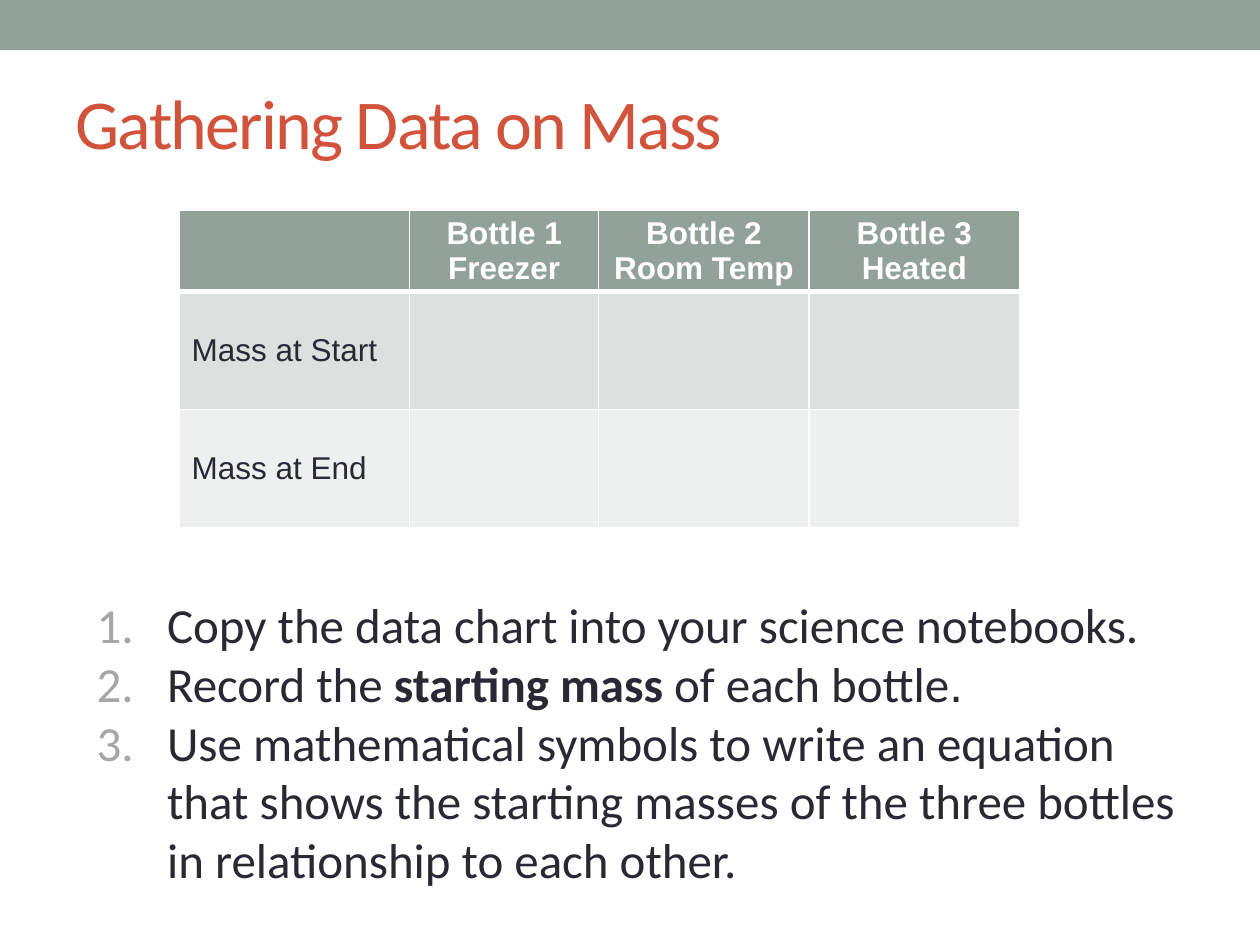
import dataclasses

import lxml.etree
import pptx
import pptx.dml.color
import pptx.enum.shapes
import pptx.enum.text
import pptx.oxml.ns
import pptx.slide
import pptx.table
import pptx.text.text
import pptx.util

Cm = pptx.util.Cm
Pt = pptx.util.Pt
qn = pptx.oxml.ns.qn
Align = pptx.enum.text.PP_ALIGN
Anchor = pptx.enum.text.MSO_ANCHOR


@dataclasses.dataclass(frozen=True)
class Theme:
    sage: str = "93A299"
    rust: str = "D2533C"
    ink: str = "292934"
    white: str = "FFFFFF"
    number: str = "A6A6A6"
    start_row: str = "DCE0DE"
    end_row: str = "EEF0EF"
    heading_font: str = "Calibri"
    table_font: str = "Arial"
    title_size: int = 40
    table_size: int = 18
    step_size: int = 28


@dataclasses.dataclass(frozen=True)
class Phrase:
    text: str
    bold: bool = False
    font: str = "Calibri"


@dataclasses.dataclass(frozen=True)
class MassRow:
    labels: tuple[str, ...]
    height: float
    fill: str
    color: str
    rule_above: int = 1
    rule_below: int = 1
    bold: bool = False
    align: Align = Align.LEFT


THEME = Theme()
COLUMN_WIDTHS = (4.65, 3.81, 4.24, 4.24)
MASS_ROWS = (
    MassRow(("", "Bottle 1\nFreezer", "Bottle 2\nRoom Temp", "Bottle 3\nHeated"),
            1.63, THEME.sage, THEME.white, rule_below=3, bold=True, align=Align.CENTER),
    MassRow(("Mass at Start", "", "", ""), 2.38, THEME.start_row, THEME.ink, rule_above=3),
    MassRow(("Mass at End", "", "", ""), 2.38, THEME.end_row, THEME.ink),
)
STEPS = (
    (Phrase("Copy the data chart into your science notebooks."),),
    (Phrase("Record the "), Phrase("starting mass ", bold=True),
     Phrase("of each bottle"), Phrase(".", font="Arial")),
    (Phrase("Use mathematical symbols to write an equation that shows the starting "
            "masses of the three bottles in relationship to each other."),),
)


def rgb(color: str) -> pptx.dml.color.RGBColor:
    return pptx.dml.color.RGBColor.from_string(color)


def write_text(paragraph: pptx.text.text._Paragraph, text: str, *, font: str, size: int,
               color: str, bold: bool = False, spacing: int = 0) -> None:
    run = paragraph.add_run()
    run.text = text
    run.font.name = font
    run.font.size = Pt(size)
    run.font.bold = bold
    run.font.color.rgb = rgb(color)
    if spacing:
        run.font._element.set("spc", str(spacing * 100))


def next_paragraph(frame: pptx.text.text.TextFrame, index: int) -> pptx.text.text._Paragraph:
    return frame.add_paragraph() if index else frame.paragraphs[0]


def rule_cell(cell: pptx.table._Cell, above: int, below: int) -> None:
    properties = cell._tc.get_or_add_tcPr()
    for side, width in (("L", 1), ("R", 1), ("T", above), ("B", below)):
        line = lxml.etree.SubElement(properties, qn(f"a:ln{side}"), w=str(Pt(width)))
        fill = lxml.etree.SubElement(line, qn("a:solidFill"))
        lxml.etree.SubElement(fill, qn("a:srgbClr"), val=THEME.white)


def draw_cell(cell: pptx.table._Cell, label: str, row: MassRow) -> None:
    rule_cell(cell, row.rule_above, row.rule_below)
    cell.fill.solid()
    cell.fill.fore_color.rgb = rgb(row.fill)
    cell.vertical_anchor = Anchor.MIDDLE
    cell.margin_top = cell.margin_bottom = Cm(0.08)
    if not label:
        return
    for index, text in enumerate(label.split("\n")):
        paragraph = next_paragraph(cell.text_frame, index)
        paragraph.alignment = row.align
        write_text(paragraph, text, font=THEME.table_font, size=THEME.table_size,
                   color=row.color, bold=row.bold)


def draw_masses(slide: pptx.slide.Slide) -> None:
    masses = slide.shapes.add_table(
        len(MASS_ROWS), len(COLUMN_WIDTHS), Cm(3.61), Cm(4.24),
        Cm(sum(COLUMN_WIDTHS)), Cm(sum(row.height for row in MASS_ROWS))).table
    for column, width in zip(masses.columns, COLUMN_WIDTHS):
        column.width = Cm(width)
    for table_row, row in zip(masses.rows, MASS_ROWS):
        table_row.height = Cm(row.height)
        for cell, label in zip(table_row.cells, row.labels):
            draw_cell(cell, label, row)


def number_paragraph(paragraph: pptx.text.text._Paragraph) -> None:
    properties = paragraph._p.get_or_add_pPr()
    indent = Cm(1.42)
    properties.set("marL", str(indent))
    properties.set("indent", str(-indent))
    number_color = lxml.etree.SubElement(properties, qn("a:buClr"))
    lxml.etree.SubElement(number_color, qn("a:srgbClr"), val=THEME.number)
    lxml.etree.SubElement(properties, qn("a:buAutoNum"), type="arabicPeriod")


def draw_steps(slide: pptx.slide.Slide) -> None:
    steps = slide.shapes.add_textbox(Cm(1.7), Cm(11.86), Cm(22.66), Cm(6.25)).text_frame
    steps.word_wrap = True
    for index, phrases in enumerate(STEPS):
        paragraph = next_paragraph(steps, index)
        number_paragraph(paragraph)
        for phrase in phrases:
            write_text(paragraph, phrase.text, font=phrase.font, size=THEME.step_size,
                       color=THEME.ink, bold=phrase.bold)


def draw_band(slide: pptx.slide.Slide, width: int) -> None:
    band = slide.shapes.add_shape(
        pptx.enum.shapes.MSO_SHAPE.RECTANGLE, 0, 0, width, Cm(1.01))
    band.shadow.inherit = False
    band.fill.solid()
    band.fill.fore_color.rgb = rgb(THEME.sage)
    band.line.fill.background()


def draw_heading(slide: pptx.slide.Slide) -> None:
    heading = slide.shapes.title
    heading.left, heading.top = Cm(1.27), Cm(1.07)
    heading.width, heading.height = Cm(22.86), Cm(2.74)
    heading.text_frame.vertical_anchor = Anchor.MIDDLE
    paragraph = heading.text_frame.paragraphs[0]
    paragraph.alignment = Align.LEFT
    write_text(paragraph, "Gathering Data on Mass", font=THEME.heading_font,
               size=THEME.title_size, color=THEME.rust, spacing=-1)


def main() -> None:
    deck = pptx.Presentation()
    deck.slide_width, deck.slide_height = Cm(25.4), Cm(19.05)
    slide = deck.slides.add_slide(deck.slide_layouts.get_by_name("Title Only"))
    draw_band(slide, deck.slide_width)
    draw_heading(slide)
    draw_masses(slide)
    draw_steps(slide)
    deck.save("out.pptx")


if __name__ == "__main__":
    main()
